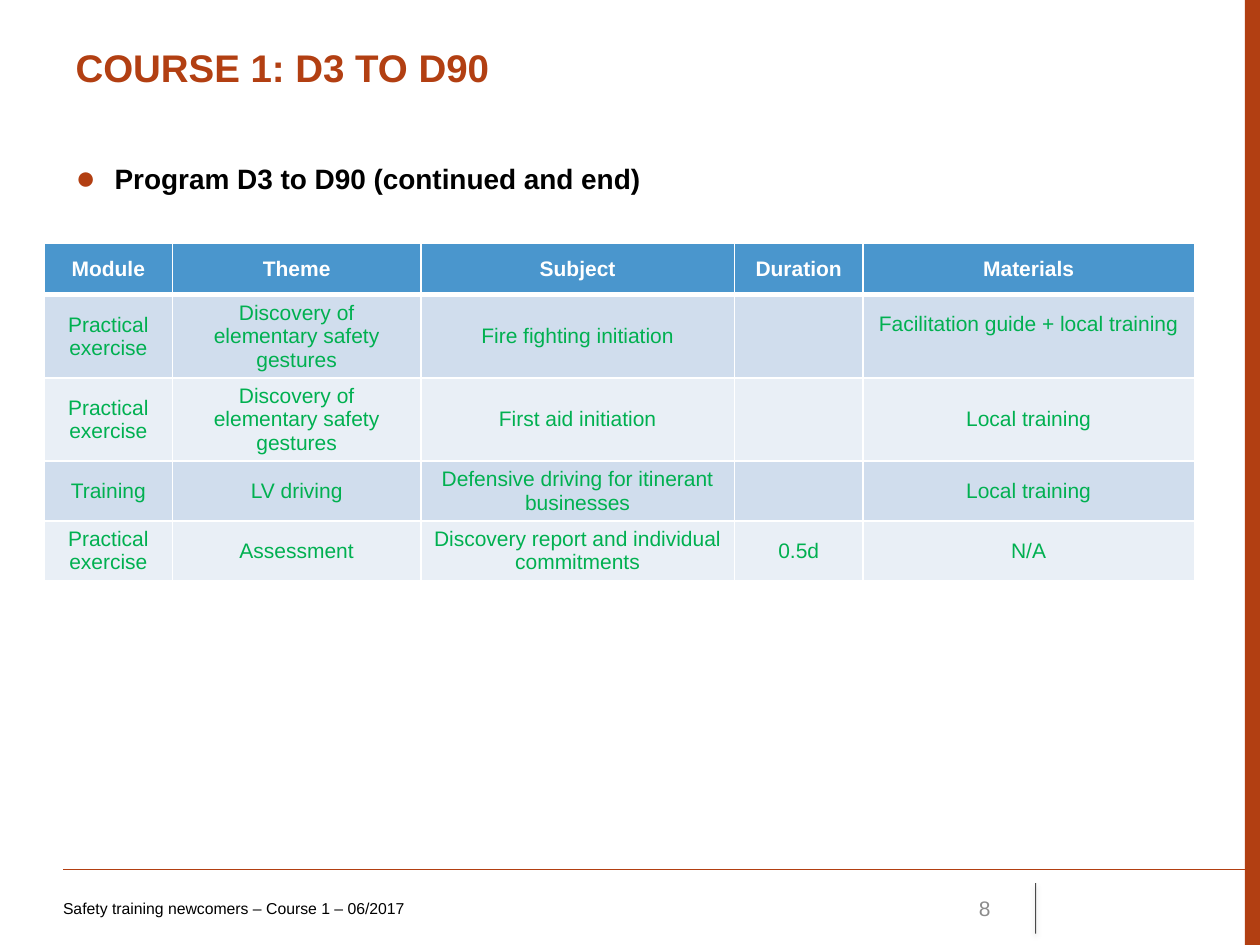
from lxml import etree
from pptx import Presentation
from pptx.dml.color import RGBColor
from pptx.enum import shapes, text
from pptx.oxml import parse_xml
from pptx.oxml.ns import nsdecls, qn
from pptx.util import Inches, Pt

RUST = RGBColor(0xB2, 0x3F, 0x12)
BLACK = RGBColor(0, 0, 0)
WHITE = RGBColor(0xFF, 0xFF, 0xFF)
GREY = RGBColor(0x8C, 0x8C, 0x8C)
GREEN = RGBColor(0x00, 0xB0, 0x50)
HEADER_BLUE = RGBColor(0x4A, 0x96, 0xCD)
BANDS = (RGBColor(0xD0, 0xDD, 0xED), RGBColor(0xE9, 0xEF, 0xF6))

COLUMN_WIDTHS = (1.02, 1.97, 2.49, 1.02, 2.63)
ROW_HEIGHTS = (0.41, 0.66, 0.66, 0.47, 0.47)
GESTURES = "Discovery of elementary safety gestures"
PROGRAM = (
    ("Module", "Theme", "Subject", "Duration", "Materials"),
    ("Practical exercise", GESTURES, "Fire fighting initiation", "",
     "Facilitation guide + local training"),
    ("Practical exercise", GESTURES, "First aid initiation", "", "Local training"),
    ("Training", "LV driving", "Defensive driving for itinerant businesses", "",
     "Local training"),
    ("Practical exercise", "Assessment", "Discovery report and individual commitments",
     "0.5d", "N/A"),
)


def write(paragraph, words, size, color, bold=False, align=text.PP_ALIGN.LEFT):
    paragraph.text = words
    paragraph.alignment = align
    font = paragraph.font
    font.name, font.size, font.bold = "Arial", Pt(size), bold
    font.color.rgb = color


def place(shape, left, top, width, height):
    shape.left, shape.top = Inches(left), Inches(top)
    shape.width, shape.height = Inches(width), Inches(height)


def add_line(page, start, end, color, width):
    line = page.shapes.add_connector(
        shapes.MSO_CONNECTOR.STRAIGHT, *map(Inches, start + end))
    line.line.color.rgb = color
    line.line.width = Pt(width)
    effects = etree.SubElement(line._element.spPr, qn("a:effectLst"))
    return line, effects


def add_side_bar(page, left, top, width, height):
    bar = page.shapes.add_shape(
        shapes.MSO_SHAPE.RECTANGLE, *map(Inches, (left, top, width, height)))
    bar.shadow.inherit = False
    bar.fill.solid()
    bar.fill.fore_color.rgb = RUST
    bar.line.fill.background()


def add_heading(page, left, top, width):
    """Fill the title and the bulleted subtitle below it."""
    title, body = page.shapes.title, page.placeholders[1]
    place(title, left, top, width, 0.69)
    place(body, left, top + 0.93, width, 0.47)
    for box in (title, body):
        box.text_frame.vertical_anchor = text.MSO_ANCHOR.TOP
        box.text_frame.auto_size = text.MSO_AUTO_SIZE.NONE
    write(title.text_frame.paragraphs[0], "COURSE 1: D3 TO D90", 22, RUST, bold=True)

    para = body.text_frame.paragraphs[0]
    properties = para._p.get_or_add_pPr()
    properties.set("marL", str(Inches(0.31)))
    properties.set("indent", str(-Inches(0.31)))
    para.space_before, para.space_after = Pt(0), Pt(3)
    for bullet in (
        f'<a:buClr {nsdecls("a")}><a:srgbClr val="{RUST}"/></a:buClr>',
        f'<a:buSzPct {nsdecls("a")} val="120000"/>',
        f'<a:buFont {nsdecls("a")} typeface="Arial"/>',
        f'<a:buChar {nsdecls("a")} char="●"/>',
    ):
        properties.append(parse_xml(bullet))
    write(para, "Program D3 to D90 (continued and end)", 16, BLACK, bold=True)


def set_borders(cell, top, bottom):
    """Draw white borders, with the top and bottom widths in points."""
    properties = cell._tc.get_or_add_tcPr()
    edges = (("lnL", 1), ("lnR", 1), ("lnT", top), ("lnB", bottom))
    for position, (edge, width) in enumerate(edges):
        properties.insert(position, parse_xml(
            f'<a:{edge} {nsdecls("a")} w="{Pt(width)}"><a:solidFill>'
            f'<a:srgbClr val="{WHITE}"/></a:solidFill></a:{edge}>'))


def add_program_table(page, left, top):
    frame = page.shapes.add_table(
        len(PROGRAM), len(COLUMN_WIDTHS), Inches(left), Inches(top),
        Inches(sum(COLUMN_WIDTHS)), Inches(sum(ROW_HEIGHTS)))
    table = frame.table
    for column, width in zip(table.columns, COLUMN_WIDTHS):
        column.width = Inches(width)
    for index, (row, height, words) in enumerate(zip(table.rows, ROW_HEIGHTS, PROGRAM)):
        row.height = Inches(height)
        header = index == 0
        for cell, label in zip(row.cells, words):
            cell.vertical_anchor = text.MSO_ANCHOR.MIDDLE
            cell.fill.solid()
            cell.fill.fore_color.rgb = HEADER_BLUE if header else BANDS[(index - 1) % 2]
            set_borders(cell, 3 if index == 1 else 1, 3 if header else 1)
            write(cell.text_frame.paragraphs[0], label, 12,
                  WHITE if header else GREEN, header, text.PP_ALIGN.CENTER)
    # The first materials entry sits half a line above the middle.
    table.cell(1, 4).margin_bottom = Inches(0.24)


def add_footer_text(page, left, top, width, words, size, color, align):
    box = page.shapes.add_textbox(*map(Inches, (left, top, width, 0.4)))
    frame = box.text_frame
    frame.word_wrap = True
    frame.vertical_anchor = text.MSO_ANCHOR.MIDDLE
    write(frame.paragraphs[0], words, size, color, align=align)
    return frame


def add_footer(page, left, top, right):
    add_line(page, (left, top), (right, top), RUST, 0.75)
    text_top = top + 0.11
    divider, effects = add_line(
        page, (8.22, text_top), (8.22, text_top + 0.4), BLACK, 0.5)
    color = divider._element.spPr.find(".//" + qn("a:srgbClr"))
    etree.SubElement(color, qn("a:alpha"), val="70000")
    effects.append(parse_xml(
        f'<a:outerShdw {nsdecls("a")} blurRad="{Pt(3.1)}" dist="{Pt(1.6)}" '
        f'dir="5400000" rotWithShape="0"><a:srgbClr val="{BLACK}">'
        '<a:alpha val="38000"/></a:srgbClr></a:outerShdw>'))
    caption = add_footer_text(
        page, left, text_top, 6.08, "Safety training newcomers – Course 1 – 06/2017",
        9, BLACK, text.PP_ALIGN.LEFT)
    caption.margin_left = 0
    add_footer_text(page, 7.17, text_top, 0.79, "8", 12, GREY, text.PP_ALIGN.RIGHT)


def main():
    deck = Presentation()
    deck.slide_width, deck.slide_height = Inches(10), Inches(7.5)
    page = deck.slides.add_slide(deck.slide_layouts[1])
    add_side_bar(page, 9.88, 0, 0.12, 7.5)
    add_heading(page, 0.5, 0.3, 8.99)
    add_program_table(page, 0.35, 1.93)
    add_footer(page, 0.5, 6.9, 10)
    deck.save("out.pptx")


if __name__ == "__main__":
    main()
